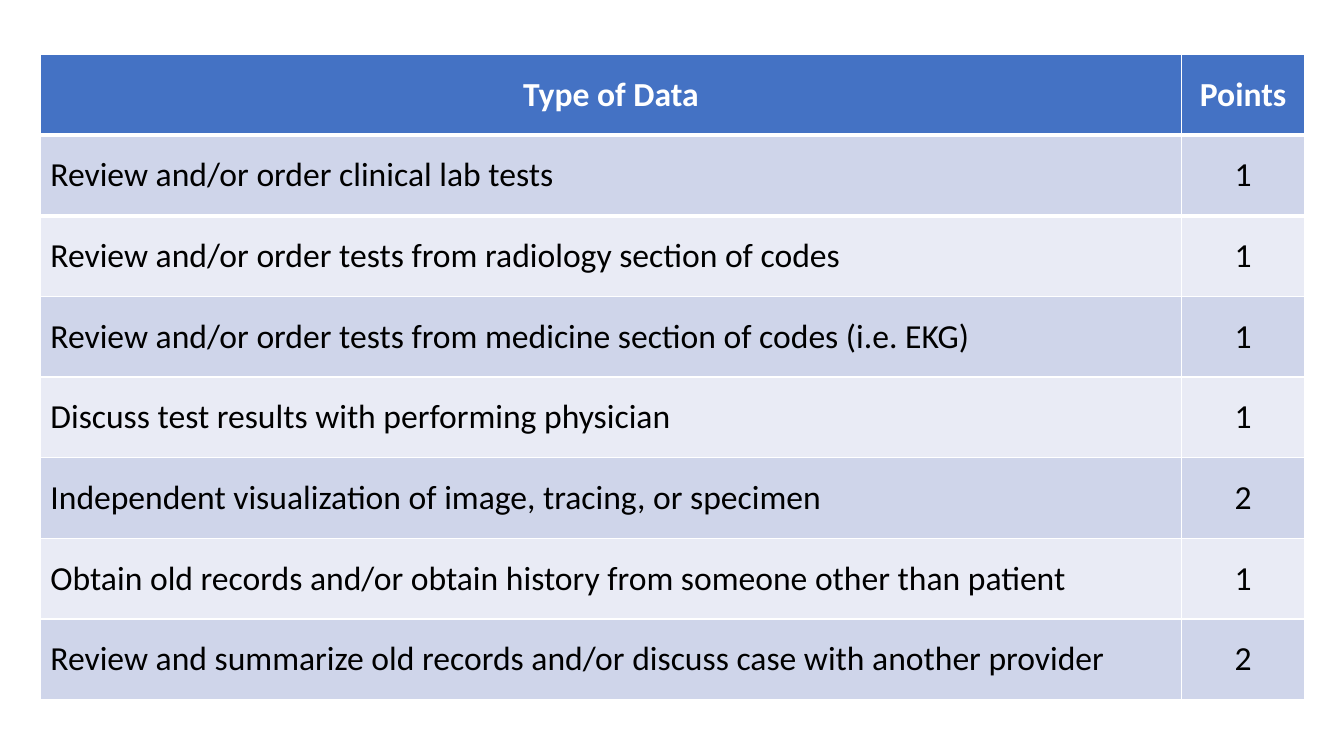
"""Build a slide with a table of data types and the points they earn."""
from lxml.etree import SubElement
from pptx import Presentation
from pptx.dml.color import RGBColor
from pptx.enum.text import MSO_ANCHOR, PP_ALIGN
from pptx.oxml.ns import qn
from pptx.util import Inches, Pt

COLORS = {
    "header": "4472C4",
    "odd": "CFD5EA",
    "even": "E9EBF5",
    "header_text": "FFFFFF",
    "body_text": "000000",
    "rule": "FFFFFF",
}
HEADINGS = ("Type of Data", "Points")
DATA_POINTS = [
    ("Review and/or order clinical lab tests", 1),
    ("Review and/or order tests from radiology section of codes", 1),
    ("Review and/or order tests from medicine section of codes (i.e. EKG)", 1),
    ("Discuss test results with performing physician", 1),
    ("Independent visualization of image, tracing, or specimen", 2),
    ("Obtain old records and/or obtain history from someone other than patient", 1),
    ("Review and summarize old records and/or discuss case with another provider", 2),
]
COLUMN_WIDTHS = (11.32, 1.22)
ROW_HEIGHT = 0.8


def add_rule(cell, side, width):
    properties = cell._tc.get_or_add_tcPr()
    rule = SubElement(properties, qn(f"a:{side}"), w=str(Pt(width)))
    fill = SubElement(rule, qn("a:solidFill"))
    SubElement(fill, qn("a:srgbClr"), val=COLORS["rule"])


def fill_cell(cell, text, fill, text_color, bold, align):
    cell.fill.solid()
    cell.fill.fore_color.rgb = RGBColor.from_string(COLORS[fill])
    cell.vertical_anchor = MSO_ANCHOR.MIDDLE
    paragraph = cell.text_frame.paragraphs[0]
    paragraph.alignment = align
    run = paragraph.add_run()
    run.text = text
    run.font.name = "Calibri"
    run.font.size = Pt(24)
    run.font.bold = bold
    run.font.color.rgb = RGBColor.from_string(COLORS[text_color])


def add_points_table(slide):
    rows = [HEADINGS, *DATA_POINTS]
    points_table = slide.shapes.add_table(
        len(rows), len(HEADINGS), Inches(0.4), Inches(0.54),
        Inches(sum(COLUMN_WIDTHS)), Inches(ROW_HEIGHT * len(rows)),
    ).table
    for column, width in zip(points_table.columns, COLUMN_WIDTHS):
        column.width = Inches(width)
    for column_index in range(len(HEADINGS)):
        add_rule(points_table.cell(0, column_index), "lnB", 3)
        add_rule(points_table.cell(1, column_index), "lnT", 3)
    for row_index, row in enumerate(rows):
        is_header = row_index == 0
        band = "odd" if row_index % 2 else "even"
        for column_index, value in enumerate(row):
            centered = is_header or column_index == 1
            fill_cell(
                points_table.cell(row_index, column_index),
                str(value),
                "header" if is_header else band,
                "header_text" if is_header else "body_text",
                is_header,
                PP_ALIGN.CENTER if centered else PP_ALIGN.LEFT,
            )


def main():
    presentation = Presentation()
    presentation.slide_width = Inches(13.33)
    presentation.slide_height = Inches(7.5)
    slide = presentation.slides.add_slide(presentation.slide_layouts[6])
    add_points_table(slide)
    presentation.save("out.pptx")


if __name__ == "__main__":
    main()
